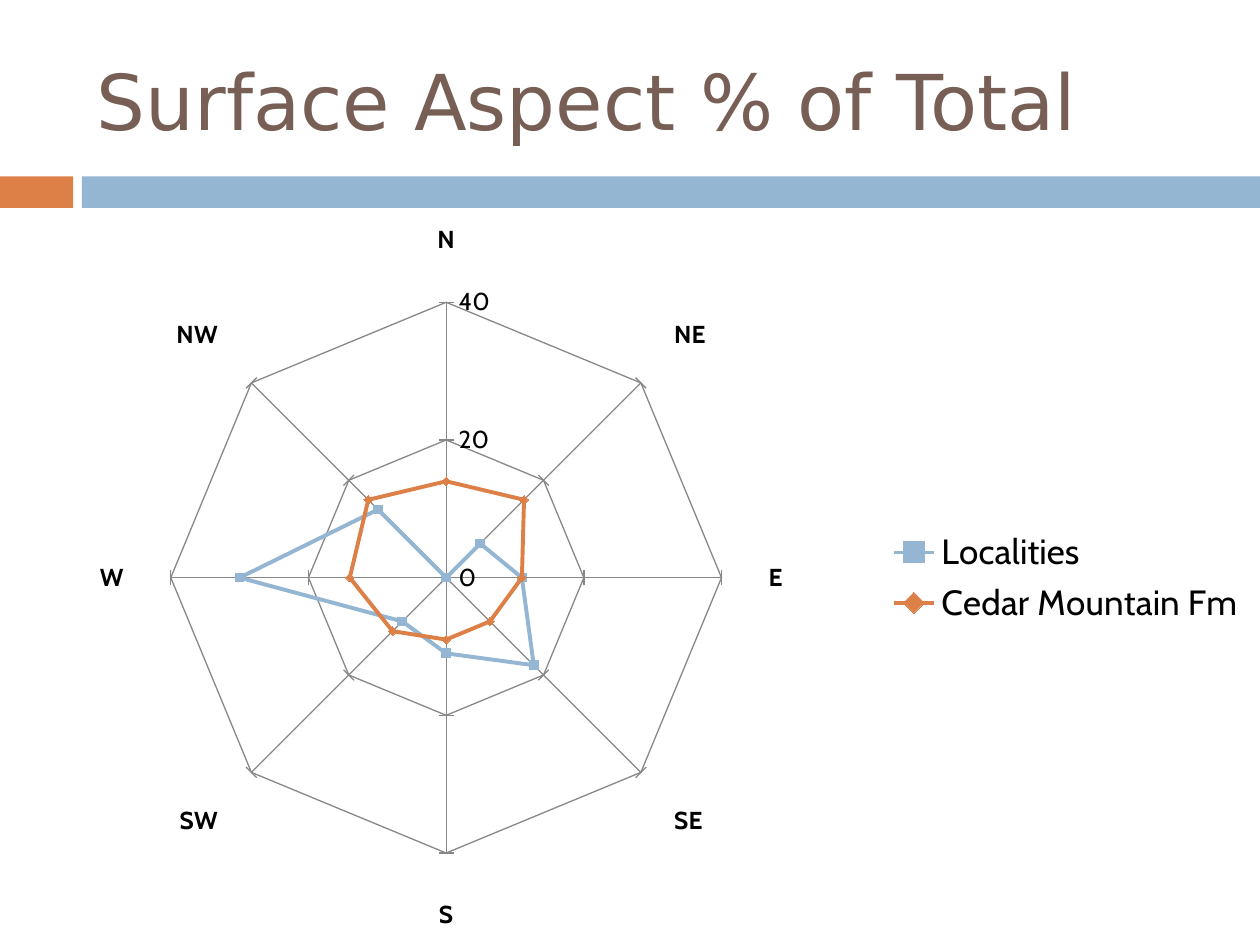
from dataclasses import dataclass

from pptx import Presentation
from pptx.chart.data import CategoryChartData as ChartData
from pptx.dml.color import RGBColor as Color
from pptx.enum.chart import XL_CHART_TYPE as Kind
from pptx.enum.chart import XL_LEGEND_POSITION as Place
from pptx.enum.chart import XL_MARKER_STYLE as Mark
from pptx.enum.chart import XL_TICK_MARK as Tick
from pptx.enum.shapes import MSO_SHAPE as Shape
from pptx.enum.text import MSO_ANCHOR as Anchor
from pptx.util import Inches, Pt


@dataclass(frozen=True)
class Theme:
    blue: str = "94B6D2"
    orange: str = "DD8047"
    brown: str = "775F55"
    grey: str = "878787"
    black: str = "000000"
    head: str = "DejaVu Sans"
    body: str = "Cabin"
    title: float = 44
    legend: float = 20
    axis: float = 14
    base: float = 10
    thin: float = 0.75
    thick: float = 2.25
    mark: int = 5


THEME = Theme()
WINDS = ["N", "NE", "E", "SE", "S", "SW", "W", "NW"]
SERIES = [
    ("Localities", [0, 7, 11, 18, 11, 9, 30, 14], THEME.blue, Mark.SQUARE),
    ("Cedar Mountain Fm", [14, 16, 11, 9, 9, 11, 14, 16], THEME.orange, Mark.DIAMOND),
]


def style(font, size, color=THEME.black, name=THEME.body, bold=False):
    font.size = Pt(size)
    font.name = name
    font.bold = bold
    font.color.rgb = Color.from_string(color)


def stroke(line, color, width):
    line.color.rgb = Color.from_string(color)
    line.width = Pt(width)


def paint(fill, color):
    fill.solid()
    fill.fore_color.rgb = Color.from_string(color)


def add_text(slide, text, box, anchor=Anchor.MIDDLE, **form):
    frame = slide.shapes.add_textbox(*map(Inches, box)).text_frame
    frame.word_wrap = True
    frame.vertical_anchor = anchor
    run = frame.paragraphs[0].add_run()
    run.text = text
    style(run.font, **form)


def add_bar(slide, box, color):
    bar = slide.shapes.add_shape(Shape.RECTANGLE, *map(Inches, box))
    bar.shadow.inherit = False
    paint(bar.fill, color)
    bar.line.fill.background()


def set_axis(axis, bold=False):
    axis.major_tick_mark = Tick.CROSS
    axis.minor_tick_mark = Tick.NONE
    axis.has_major_gridlines = True
    stroke(axis.major_gridlines.format.line, THEME.grey, THEME.thin)
    stroke(axis.format.line, THEME.grey, THEME.thin)
    style(axis.tick_labels.font, THEME.axis, bold=bold)


def add_radar(slide, box):
    data = ChartData()
    data.categories = WINDS
    for name, vals, *_ in SERIES:
        data.add_series(name, vals)
    chart = slide.shapes.add_chart(Kind.RADAR_MARKERS, *map(Inches, box), data).chart
    style(chart.font, THEME.base)
    chart.has_title = False
    chart.has_legend = True
    chart.legend.position = Place.RIGHT
    chart.legend.include_in_layout = False
    style(chart.legend.font, THEME.legend)
    set_axis(chart.category_axis, bold=True)
    value = chart.value_axis
    set_axis(value)
    value.minimum_scale, value.maximum_scale, value.major_unit = 0, 40, 20
    value.tick_labels.number_format = "General"
    value.tick_labels.number_format_is_linked = False
    plot = chart.plots[0]
    plot.vary_by_categories = False
    for line, (_, _, color, mark) in zip(plot.series, SERIES):
        line.smooth = False
        stroke(line.format.line, color, THEME.thick)
        line.marker.style = mark
        line.marker.size = THEME.mark
        paint(line.marker.format.fill, color)
        stroke(line.marker.format.line, color, THEME.thin)


def main():
    deck = Presentation()
    deck.slide_width, deck.slide_height = Inches(10), Inches(7.5)
    slide = deck.slides.add_slide(deck.slide_layouts[6])
    add_bar(slide, (0, 1.4, 0.58, 0.25), THEME.orange)
    add_bar(slide, (0.65, 1.4, 9.35, 0.25), THEME.blue)
    add_text(slide, "Surface Aspect % of Total", (0.67, 0.25, 8.92, 1.08),
             size=THEME.title, color=THEME.brown, name=THEME.head)
    add_radar(slide, (0, 1.67, 10, 5.83))
    deck.save("out.pptx")


if __name__ == "__main__":
    main()
